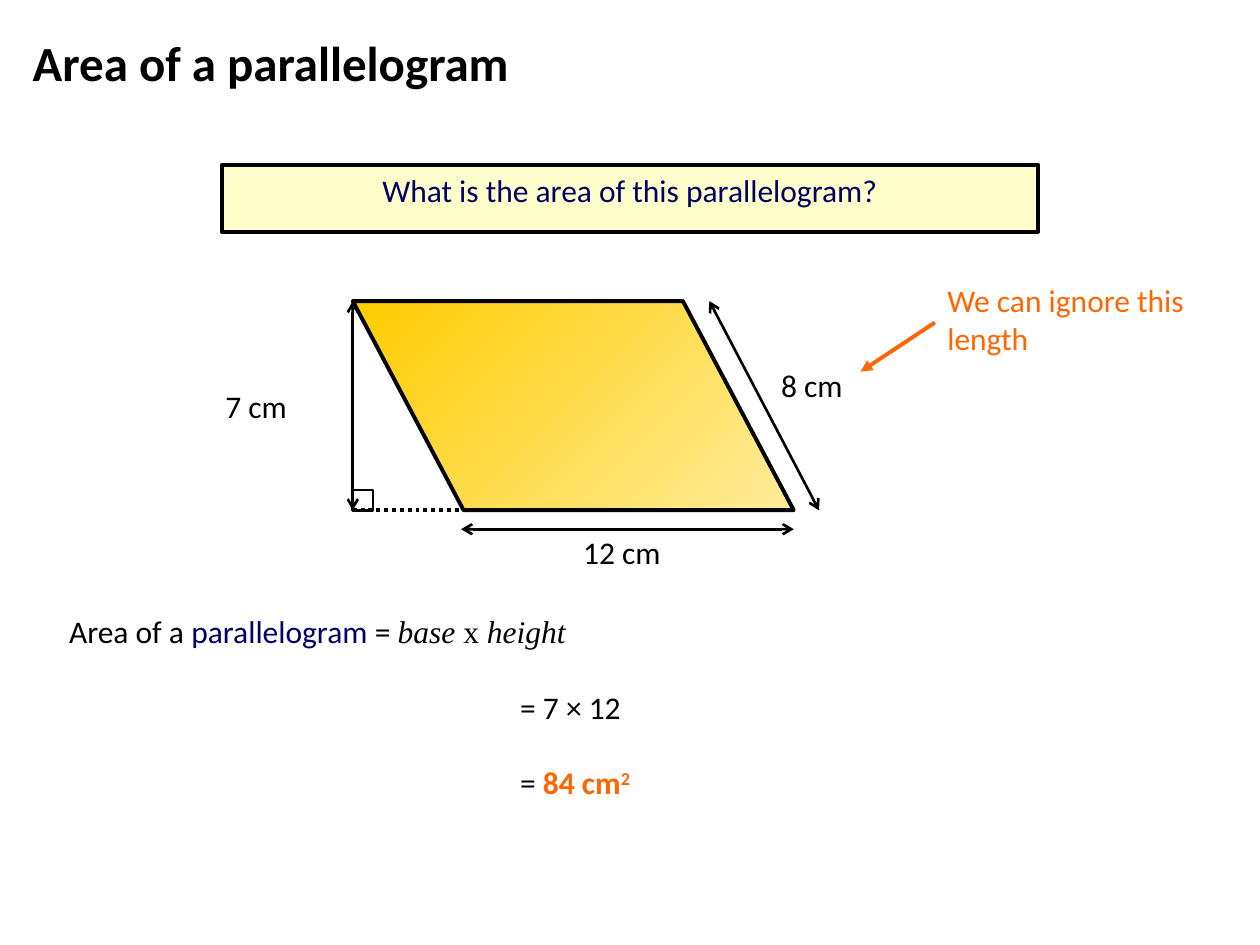
"""Build the slide on the area of a parallelogram."""
from lxml.etree import SubElement
from pptx import Presentation
from pptx.dml.color import RGBColor
from pptx.enum.dml import MSO_LINE
from pptx.enum.shapes import MSO_CONNECTOR, MSO_SHAPE as SHAPE
from pptx.enum.text import MSO_ANCHOR as ANCHOR, PP_ALIGN as ALIGN
from pptx.oxml.ns import qn
from pptx.util import Inches, Pt

BLACK = RGBColor(0x00, 0x00, 0x00)
NAVY = RGBColor(0x00, 0x00, 0x66)
ORANGE = RGBColor(0xFF, 0x66, 0x00)
CREAM = RGBColor(0xFF, 0xFF, 0xCC)
GOLD = RGBColor(0xFF, 0xCC, 0x00)
PALE_GOLD = RGBColor(0xFF, 0xEC, 0x9B)

BODY = {"name": "Calibri", "size": Pt(18), "bold": False, "italic": False}
SERIF = {"name": "Times New Roman"}
SERIF_ITALIC = {**SERIF, "italic": True}
ANSWER = {"color": ORANGE, "bold": True}

LEFT, TOP, BOTTOM, RIGHT = 2.8, 2.39, 4.05, 6.3
BASE_LEFT = 3.66


def write(frame, runs, align=ALIGN.LEFT, anchor=ANCHOR.TOP):
    """Fill a text frame with one paragraph of (text, format) runs."""
    frame.word_wrap = True
    frame.vertical_anchor = anchor
    paragraph = frame.paragraphs[0]
    paragraph.alignment = align
    for text, changes in runs:
        run = paragraph.add_run()
        run.text = text
        values = {"color": BLACK, **BODY, **changes}
        run.font.color.rgb = values.pop("color")
        baseline = values.pop("baseline", None)
        for key, value in values.items():
            setattr(run.font, key, value)
        if baseline:
            run.font._element.set("baseline", baseline)


def add_title(slide, text):
    """Place the slide title."""
    title = slide.shapes.title
    box = {"left": 0.16, "top": 0.16, "width": 9, "height": 0.67}
    for key, value in box.items():
        setattr(title, key, Inches(value))
    write(title.text_frame, [(text, {"size": Pt(28), "bold": True})], anchor=ANCHOR.MIDDLE)


def add_text(slide, left, top, width, height, *runs):
    """Add a text box with one paragraph."""
    box = slide.shapes.add_textbox(*map(Inches, (left, top, width, height)))
    write(box.text_frame, runs)


def add_outlined(slide, kind, left, top, width, height, weight):
    """Add an unfilled preset shape with a black outline."""
    shape = slide.shapes.add_shape(kind, *map(Inches, (left, top, width, height)))
    shape.shadow.inherit = False
    shape.fill.background()
    shape.line.color.rgb = BLACK
    shape.line.width = Pt(weight)
    return shape


def add_line(slide, start, end, color=BLACK, weight=1.5, dash=None, head=None, tail=None):
    """Add a straight line with optional dash and arrowheads."""
    line = slide.shapes.add_connector(MSO_CONNECTOR.STRAIGHT, *map(Inches, (*start, *end)))
    line.line.color.rgb = color
    line.line.width = Pt(weight)
    if dash:
        line.line.dash_style = dash
    outline = line.line._get_or_add_ln()
    for tag, kind in (("a:headEnd", head), ("a:tailEnd", tail)):
        if kind:
            SubElement(outline, qn(tag), type=kind)
    SubElement(line._element.spPr, qn("a:effectLst"))


def add_dimension(slide, start, end):
    """Add a measuring line with an open arrow at both ends."""
    add_line(slide, start, end, head="arrow", tail="arrow")


def add_parallelogram(slide):
    """Add the gold parallelogram, leaning to the left."""
    figure = add_outlined(slide, SHAPE.PARALLELOGRAM, LEFT, TOP, RIGHT - LEFT, BOTTOM - TOP, 2.25)
    figure.adjustments[0] = 0.53
    figure._element.spPr.xfrm.set("flipV", "1")
    figure.fill.gradient()
    figure.fill.gradient_angle = 45
    for stop, color, position in zip(figure.fill.gradient_stops, (GOLD, PALE_GOLD), (0, 1)):
        stop.color.rgb = color
        stop.position = position


def main():
    """Build and save the slide."""
    deck = Presentation()
    deck.slide_width, deck.slide_height = Inches(10), Inches(7.5)
    slide = deck.slides.add_slide(deck.slide_layouts[5])
    add_title(slide, "Area of a parallelogram")

    question = add_outlined(slide, SHAPE.RECTANGLE, 1.76, 1.31, 6.48, 0.53, 2.25)
    question.fill.solid()
    question.fill.fore_color.rgb = CREAM
    write(question.text_frame, [("What is the area of this parallelogram?", {"color": NAVY})],
          ALIGN.CENTER)

    add_dimension(slide, (BASE_LEFT, 4.2), (RIGHT, 4.2))
    add_dimension(slide, (LEFT, TOP), (LEFT, BOTTOM))
    add_line(slide, (LEFT, BOTTOM), (3.86, BOTTOM), weight=2.25, dash=MSO_LINE.ROUND_DOT)
    add_outlined(slide, SHAPE.RECTANGLE, LEFT, 3.89, 0.16, 0.16, 1.5)
    add_parallelogram(slide)
    add_dimension(slide, (5.63, TOP), (6.5, BOTTOM))
    for text, left, top, width in (("12 cm", 4.53, 4.18, 1.11), ("7 cm", 1.69, 3.02, 0.92),
                                   ("8 cm", 6.1, 2.86, 0.92)):
        add_text(slide, left, top, width, 0.5, (text, {}))

    add_text(slide, 7.42, 2.18, 2.38, 0.9, ("We can ignore this length", {"color": ORANGE}))
    add_line(slide, (7.42, 2.56), (6.83, 2.95), ORANGE, 2.25, tail="triangle")

    add_text(slide, 0.45, 4.81, 4.2, 0.4, ("Area of a ", {}), ("parallelogram", {"color": NAVY}),
             (" = ", {}), ("base ", SERIF_ITALIC), ("x", SERIF), (" height", SERIF_ITALIC))
    add_text(slide, 4.03, 5.41, 1.52, 0.5, ("= 7 × 12", {}))
    add_text(slide, 4.03, 6.01, 1.56, 0.5, ("= ", {}), ("84 cm", ANSWER),
             ("2", {**ANSWER, "baseline": "30000"}))
    deck.save("out.pptx")


if __name__ == "__main__":
    main()
